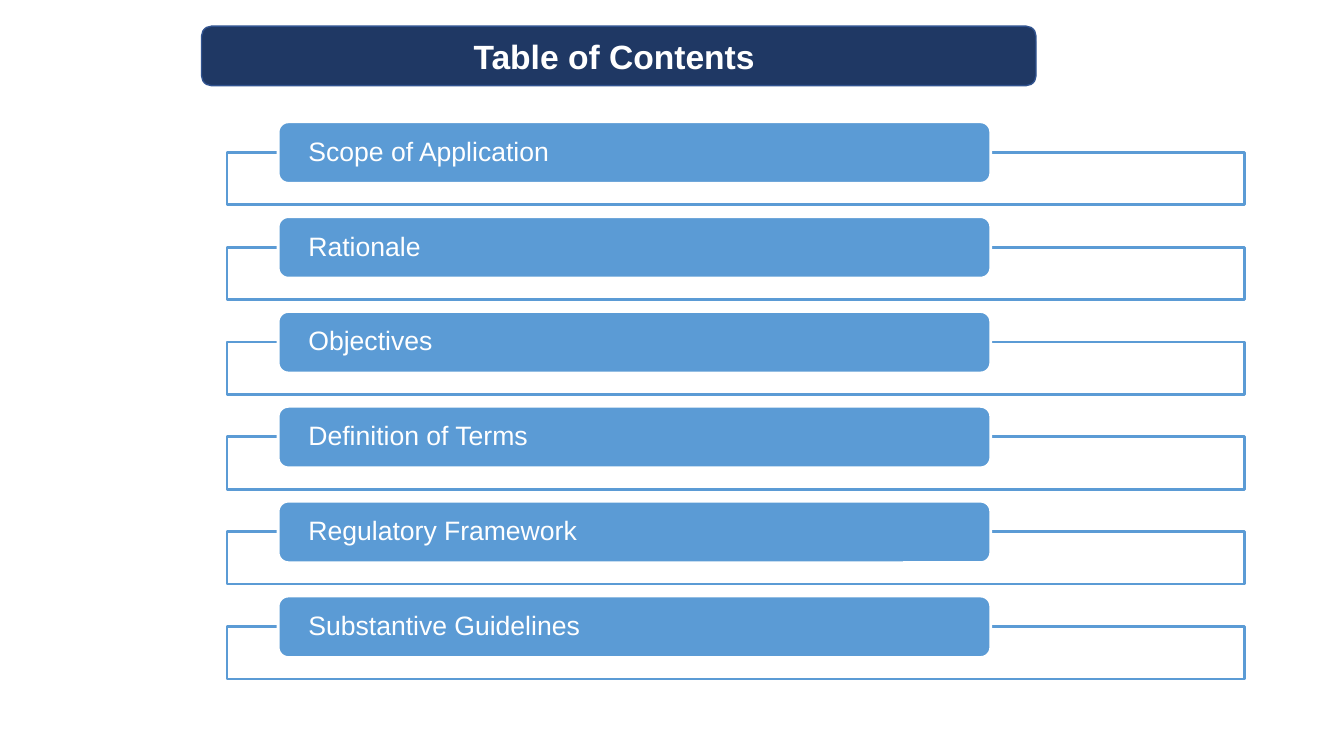
"""Build a table of contents slide with a title banner and six framed entries."""
from dataclasses import dataclass

from lxml import etree
from pptx import Presentation
from pptx import util as u
from pptx.dml.color import RGBColor
from pptx.enum import shapes, text
from pptx.oxml.ns import qn

TITLE = "Table of Contents "
ENTRIES = [
    "Scope of Application",
    "Rationale",
    "Objectives",
    "Definition of Terms",
    "Regulatory Framework",
    "Substantive Guidelines",
]

TITLE_BOX = (5.08, 0.66, 21.03, 1.5)
FRAME_BOX = (5.72, 3.84, 25.65, 1.32)
LABEL_BOX = (7.01, 3.07, 17.96, 1.55)
ENTRY_PITCH = 2.39
LABEL_INSET = 0.69


@dataclass(frozen=True)
class Theme:
    """Colours and type sizes of the slide."""
    navy: str = "1F3864"
    navy_edge: str = "31538F"
    blue: str = "5B9BD5"
    white: str = "FFFFFF"
    font: str = "Arial"
    title_size: int = 24
    entry_size: int = 19
    frame_opacity: int = 90


THEME = Theme()


def add_box(slide, kind, box, fill, line, line_width, shift=0):
    """Add a filled, outlined shape, moved down by shift centimetres."""
    left, top, width, height = box
    shape = slide.shapes.add_shape(
        kind, u.Cm(left), u.Cm(top + shift), u.Cm(width), u.Cm(height))
    shape.shadow.inherit = False
    shape.fill.solid()
    shape.fill.fore_color.rgb = RGBColor.from_string(fill)
    shape.line.color.rgb = RGBColor.from_string(line)
    shape.line.width = u.Pt(line_width)
    return shape


def set_label(shape, words, size, alignment, bold=False):
    """Write one line of white text in a shape."""
    frame = shape.text_frame
    frame.text = words
    frame.word_wrap = True
    frame.vertical_anchor = text.MSO_ANCHOR.MIDDLE
    paragraph = frame.paragraphs[0]
    paragraph.alignment = alignment
    font = paragraph.runs[0].font
    font.name = THEME.font
    font.size = u.Pt(size)
    font.bold = bold
    font.color.rgb = RGBColor.from_string(THEME.white)
    return frame


def set_opacity(shape, percent):
    """Make the solid fill of a shape partly transparent."""
    colour = shape.fill._xPr.find(qn("a:solidFill"))[0]
    etree.SubElement(colour, qn("a:alpha")).set("val", str(percent * 1000))


def add_entry(slide, words, shift):
    """Add one contents entry: an open frame with a label over its top edge."""
    frame = add_box(slide, shapes.MSO_SHAPE.RECTANGLE, FRAME_BOX,
                    THEME.white, THEME.blue, 2, shift)
    set_opacity(frame, THEME.frame_opacity)
    label = add_box(slide, shapes.MSO_SHAPE.ROUNDED_RECTANGLE, LABEL_BOX,
                    THEME.blue, THEME.white, 2, shift)
    label_text = set_label(label, words, THEME.entry_size, text.PP_ALIGN.LEFT)
    label_text.margin_left = label_text.margin_right = u.Cm(LABEL_INSET)
    label_text.margin_top = label_text.margin_bottom = 0
    label_text.paragraphs[0].line_spacing = 0.9


def main():
    """Build and save the slide."""
    presentation = Presentation()
    presentation.slide_width = u.Cm(33.87)
    presentation.slide_height = u.Cm(19.05)
    slide = presentation.slides.add_slide(presentation.slide_layouts[6])

    banner = add_box(slide, shapes.MSO_SHAPE.ROUNDED_RECTANGLE, TITLE_BOX,
                     THEME.navy, THEME.navy_edge, 1)
    set_label(banner, TITLE, THEME.title_size, text.PP_ALIGN.CENTER, bold=True)
    for index, words in enumerate(ENTRIES):
        add_entry(slide, words, index * ENTRY_PITCH)

    presentation.save("out.pptx")


if __name__ == "__main__":
    main()
